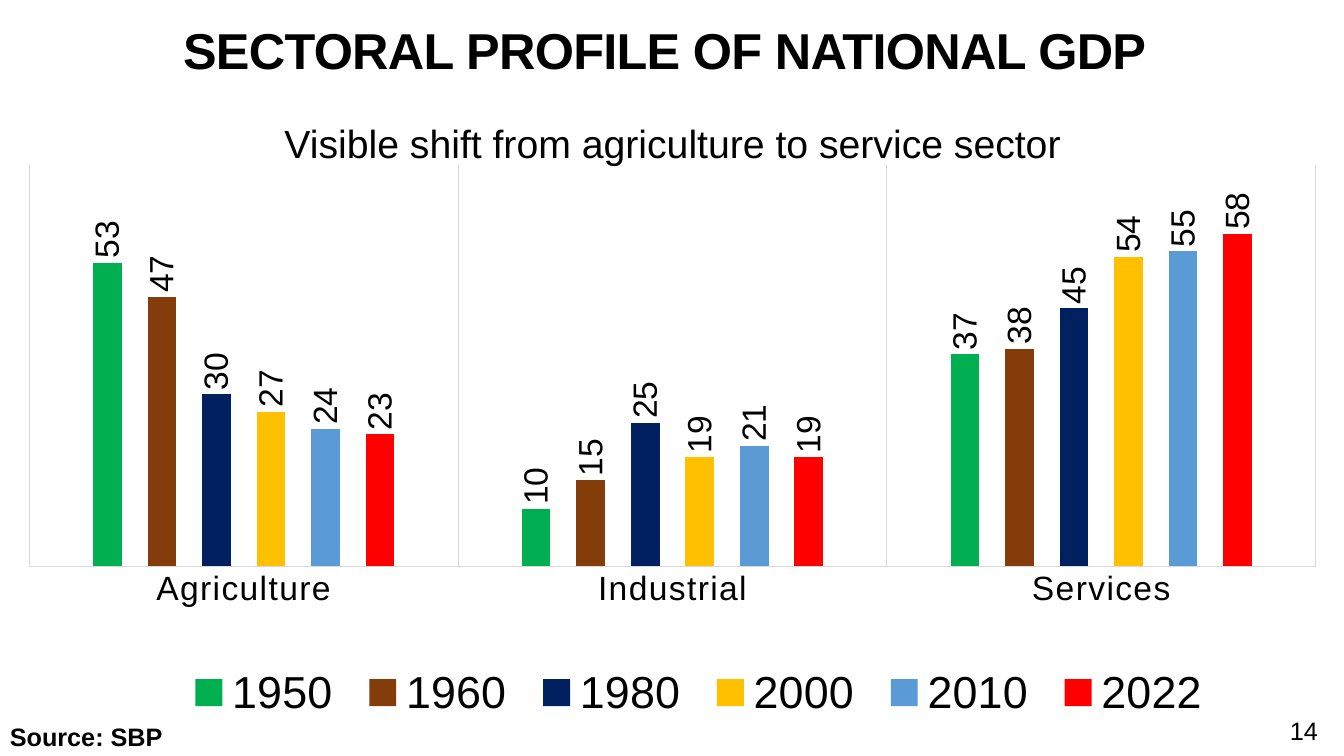
from lxml.etree import SubElement
from pptx import Presentation
from pptx.chart.data import CategoryChartData
from pptx.dml.color import RGBColor
from pptx.enum.chart import XL_CHART_TYPE, XL_LABEL_POSITION, XL_LEGEND_POSITION, XL_TICK_MARK
from pptx.enum.shapes import MSO_SHAPE
from pptx.enum.text import MSO_ANCHOR, PP_ALIGN
from pptx.oxml.ns import qn
from pptx.util import Inches, Pt

BLACK = RGBColor(0x00, 0x00, 0x00)
WHITE = RGBColor(0xFF, 0xFF, 0xFF)
GRAY = RGBColor(0xD9, 0xD9, 0xD9)
GREEN = RGBColor(0x00, 0xB0, 0x50)
BROWN = RGBColor(0x84, 0x3C, 0x0B)
NAVY = RGBColor(0x00, 0x20, 0x60)
GOLD = RGBColor(0xFF, 0xC0, 0x00)
BLUE = RGBColor(0x5B, 0x9B, 0xD5)
RED = RGBColor(0xFF, 0x00, 0x00)

TITLE = "SECTORAL PROFILE OF NATIONAL GDP"
CLAIM = "Visible shift from agriculture to service sector"
SOURCE = "Source: SBP"
PAGE = "14"
SECTORS = ["Agriculture", "Industrial", "Services"]
YEARS = [
    ("1950", GREEN, (53, 10, 37)),
    ("1960", BROWN, (47, 15, 38)),
    ("1980", NAVY, (30, 25, 45)),
    ("2000", GOLD, (27, 19, 54)),
    ("2010", BLUE, (24, 21, 55)),
    ("2022", RED, (23, 19, 58)),
]
PLOT = (0.01, 0.08, 0.98, 0.65)
LEGEND = (0.12, 0.88, 0.8, 0.11)


def style(font, size, bold=False):
    """Give a font the slide's typeface and colour."""
    font.name = "Arial"
    font.size = Pt(size)
    font.bold = bold
    font.color.rgb = BLACK


def write(shape, text, size, align, anchor=MSO_ANCHOR.TOP, bold=False):
    """Write one styled run into a shape and return its paragraph and run."""
    frame = shape.text_frame
    frame.word_wrap = True
    frame.vertical_anchor = anchor
    para = frame.paragraphs[0]
    para.alignment = align
    run = para.add_run()
    run.text = text
    style(run.font, size, bold)
    return para, run


def place(parent, index, box, inner=False):
    """Set the manual layout of a chart part as fractions of the chart."""
    for old in parent.findall(qn("c:layout")):
        parent.remove(old)
    layout = SubElement(parent, qn("c:layout"))
    parent.insert(index, layout)
    manual = SubElement(layout, qn("c:manualLayout"))
    parts = [("layoutTarget", "inner")] if inner else []
    parts += [("xMode", "edge"), ("yMode", "edge")]
    parts += zip("xywh", box)
    for tag, value in parts:
        SubElement(manual, qn("c:" + tag)).set("val", str(value))


def add_bars(slide):
    """Add the column chart of sector shares by year."""
    data = CategoryChartData(number_format="0")
    data.categories = SECTORS
    for year, color, shares in YEARS:
        data.add_series(year, shares)
    chart = slide.shapes.add_chart(
        XL_CHART_TYPE.COLUMN_CLUSTERED, Inches(0.16), Inches(1.15),
        Inches(13.02), Inches(6.12), data).chart
    style(chart.font, 24)
    chart.has_title = False

    plot = chart.plots[0]
    plot.gap_width = 444
    plot.overlap = -90
    plot.vary_by_categories = False
    for series, (year, color, shares) in zip(plot.series, YEARS):
        series.format.fill.solid()
        series.format.fill.fore_color.rgb = color
        labels = series.data_labels
        labels.show_value = True
        labels.position = XL_LABEL_POSITION.OUTSIDE_END
        labels.number_format = "0"
        labels.number_format_is_linked = False
        style(labels.font, 24)
        body = next(labels._element.iter(qn("a:bodyPr")))
        body.set("rot", "-5400000")
        body.set("vert", "horz")

    axis = chart.category_axis
    axis.major_tick_mark = XL_TICK_MARK.NONE
    axis.has_major_gridlines = True
    for line in (axis.format.line, axis.major_gridlines.format.line):
        line.color.rgb = GRAY
        line.width = Pt(0.75)
    style(axis.tick_labels.font, 24)
    next(axis._element.iter(qn("a:defRPr"))).set("spc", "100")

    scale = chart.value_axis
    scale.minimum_scale = 0
    scale.maximum_scale = 70
    scale.has_major_gridlines = False
    scale.visible = False

    chart.has_legend = True
    legend = chart.legend
    legend.position = XL_LEGEND_POSITION.TOP
    legend.include_in_layout = False
    style(legend.font, 32)
    place(legend._element, 1, LEGEND)
    place(next(chart._chartSpace.iter(qn("c:plotArea"))), 0, PLOT, True)


def main():
    """Build and save the slide."""
    deck = Presentation()
    deck.slide_width = Inches(13.33)
    deck.slide_height = Inches(7.5)
    slide = deck.slides.add_slide(deck.slide_layouts[5])
    shapes = slide.shapes

    title = shapes.title
    title.left, title.top = Inches(0), Inches(0)
    title.width, title.height = Inches(13.18), Inches(1.08)
    para, run = write(title, TITLE, 36, PP_ALIGN.CENTER, MSO_ANCHOR.MIDDLE, True)
    para.line_spacing = 0.85
    run.font._element.set("spc", "-50")

    add_bars(slide)

    page = shapes.add_textbox(Inches(11.74), Inches(7.05), Inches(1.43), Inches(0.4))
    write(page, PAGE, 18, PP_ALIGN.RIGHT, MSO_ANCHOR.MIDDLE)

    claim = shapes.add_shape(
        MSO_SHAPE.RECTANGLE, Inches(2.34), Inches(1.13), Inches(8.66), Inches(0.4))
    claim.shadow.inherit = False
    claim.fill.solid()
    claim.fill.fore_color.rgb = WHITE
    claim.line.fill.background()
    write(claim, CLAIM, 28, PP_ALIGN.CENTER)

    source = shapes.add_textbox(Inches(0), Inches(7.11), Inches(4.67), Inches(0.4))
    write(source, SOURCE, 18, PP_ALIGN.LEFT, bold=True)

    deck.save("out.pptx")


if __name__ == "__main__":
    main()
